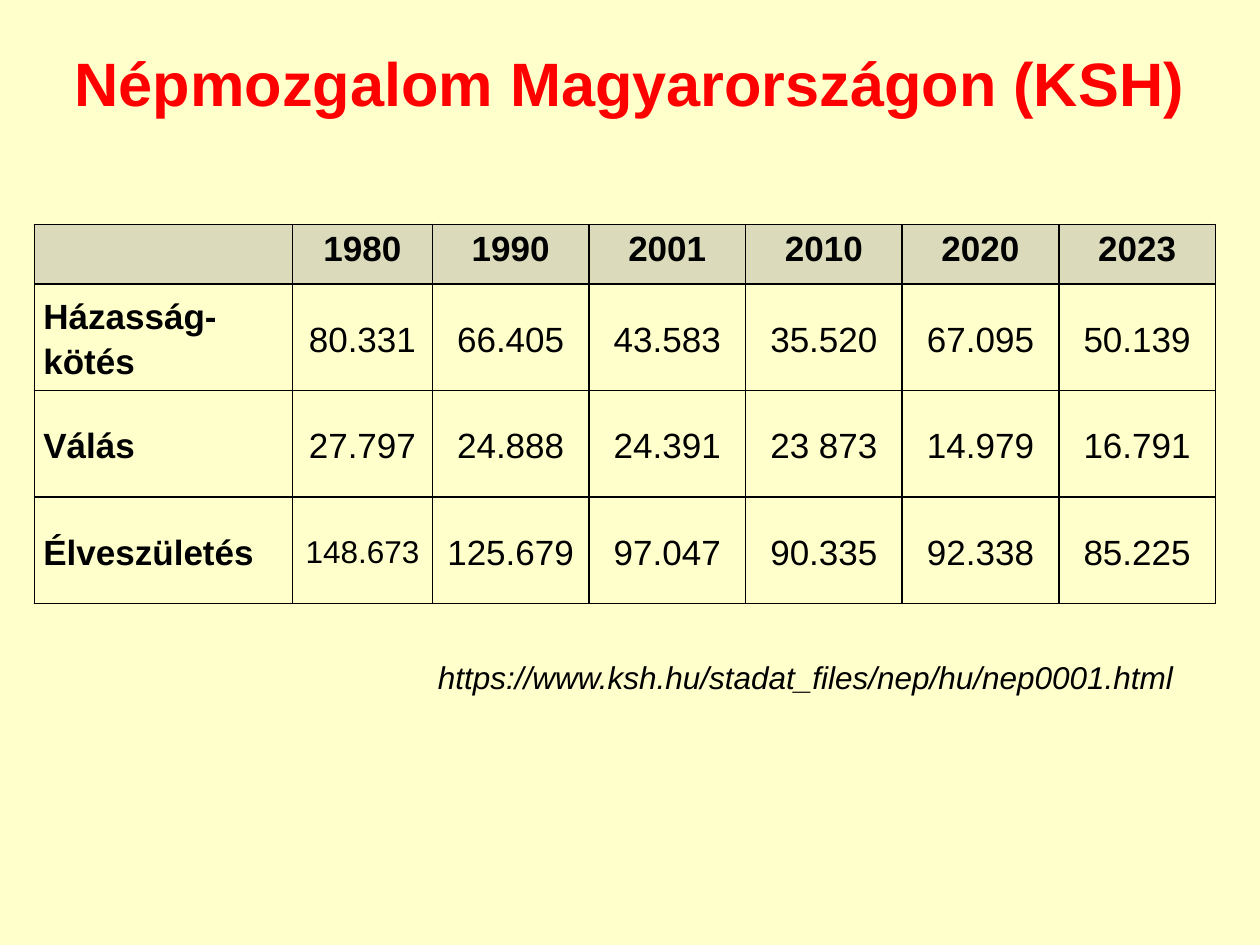
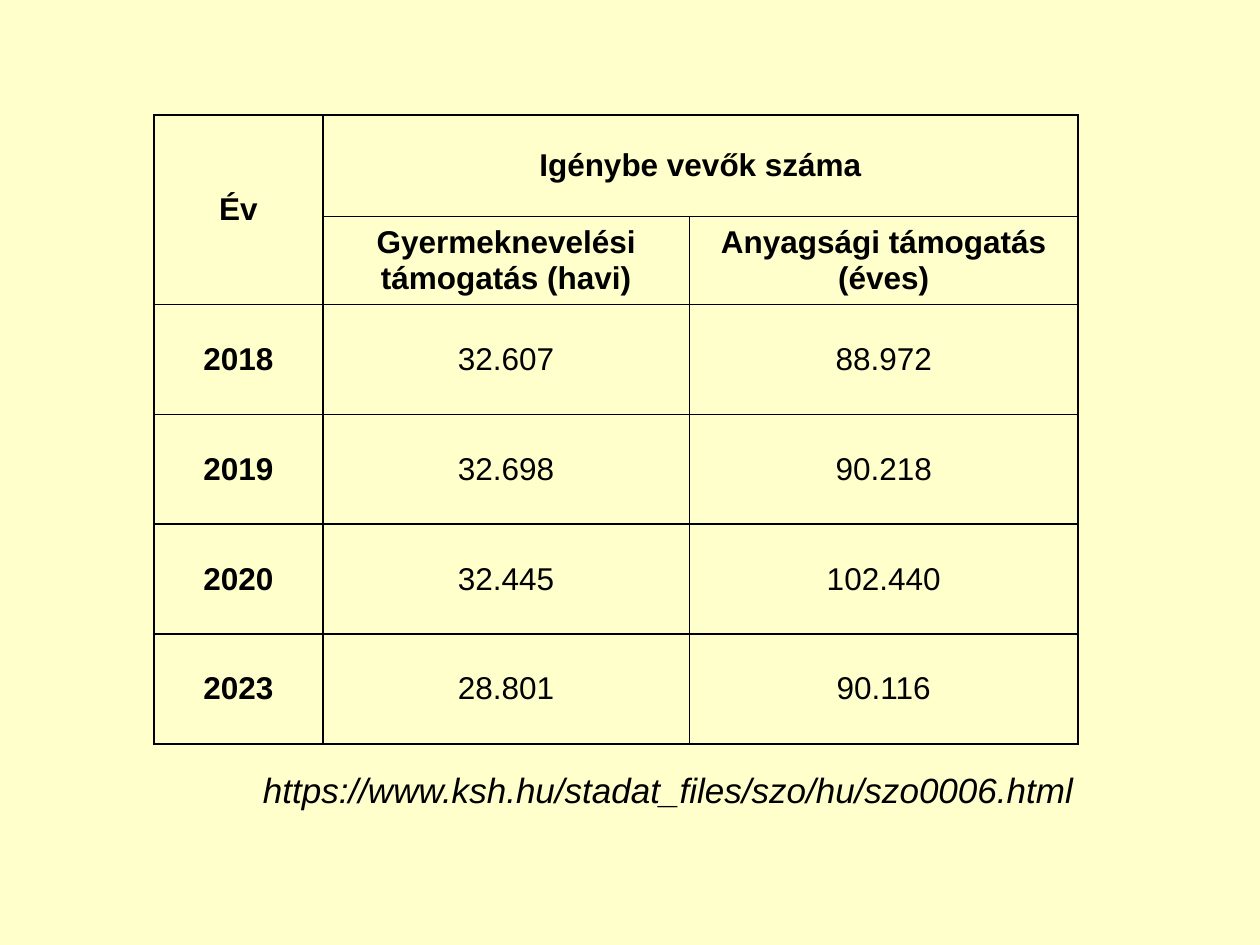
import dataclasses

import lxml.etree
import pptx
import pptx.dml.color
import pptx.enum.text
import pptx.oxml.ns
import pptx.util

Pt = pptx.util.Pt
qn = pptx.oxml.ns.qn
Align = pptx.enum.text.PP_ALIGN
Anchor = pptx.enum.text.MSO_ANCHOR


@dataclasses.dataclass(frozen=True)
class Theme:
    """Colours as hex strings, and type sizes in points."""
    font: str = "Arial"
    paper: str = "FFFFCC"
    ink: str = "000000"
    title: str = "FF0000"
    band: str = "A6A6A6"
    band_alpha: int = 40
    title_size: int = 35
    large: int = 20
    small: int = 18
    rule: int = 1


@dataclasses.dataclass(frozen=True)
class Style:
    """The look of one table."""
    size: int
    heads: int
    inset: tuple
    spacing: float = 1.0
    banded: bool = False
    label: Align = Align.CENTER


THEME = Theme()

MOVES = [
    ["", "1980", "1990", "2001", "2010", "2020", "2023"],
    ["Házasság-kötés", "80.331", "66.405", "43.583", "35.520", "67.095", "50.139"],
    ["Válás", "27.797", "24.888", "24.391", "23 873", "14.979", "16.791"],
    ["Élveszületés", "148.673", "125.679", "97.047", "90.335", "92.338", "85.225"],
]
GRANTS = [
    ["Év", "Igénybe vevők száma", ""],
    ["", "Gyermeknevelési támogatás (havi)", "Anyagsági támogatás (éves)"],
    ["2018", "32.607", "88.972"],
    ["2019", "32.698", "90.218"],
    ["2020", "32.445", "102.440"],
    ["2023", "28.801", "90.116"],
]


def rgb(code):
    """Turn a hex string into a colour."""
    return pptx.dml.color.RGBColor.from_string(code)


def split(total, fixed, count):
    """Give the fixed lengths, then share the rest equally."""
    rest = count - len(fixed)
    return list(fixed) + [(total - sum(fixed)) / rest] * rest


def write(frame, text, size, color=THEME.ink, align=Align.CENTER, bold=False, italic=False):
    """Put one formatted paragraph in a text frame."""
    frame.text = text
    para = frame.paragraphs[0]
    para.alignment = align
    for run in para.runs:
        font = run.font
        font.name, font.size = THEME.font, Pt(size)
        font.bold, font.italic = bold, italic
        font.color.rgb = rgb(color)
    return para


def border(cell):
    """Draw a thin rule on all four sides of a cell."""
    props = cell._tc.get_or_add_tcPr()
    for spot, side in enumerate(("a:lnL", "a:lnR", "a:lnT", "a:lnB")):
        line = lxml.etree.Element(qn(side), w=str(Pt(THEME.rule)))
        fill = lxml.etree.SubElement(line, qn("a:solidFill"))
        lxml.etree.SubElement(fill, qn("a:srgbClr"), val=THEME.ink)
        props.insert(spot, line)


def shade(cell, banded):
    """Fill a cell with the clear band colour, or leave it open."""
    if not banded:
        cell.fill.background()
        return
    cell.fill.solid()
    cell.fill.fore_color.rgb = rgb(THEME.band)
    color = cell._tc.tcPr.find(".//" + qn("a:srgbClr"))
    lxml.etree.SubElement(color, qn("a:alpha"), val=str(THEME.band_alpha * 1000))


def add_grid(slide, box, data, cols, rows, style):
    """Add a ruled table in the box and return it."""
    left, top, width, height = box
    frame = slide.shapes.add_table(len(data), len(data[0]), *map(Pt, box))
    table = frame.table
    for col, size in zip(table.columns, split(width, cols, len(data[0]))):
        col.width = Pt(size)
    for row, size in zip(table.rows, split(height, rows, len(data))):
        row.height = Pt(size)
    side, edge = map(Pt, style.inset)
    for r, line in enumerate(data):
        for c, text in enumerate(line):
            cell = table.cell(r, c)
            head = r < style.heads
            band = head and style.banded
            cell.margin_left = cell.margin_right = side
            cell.margin_top = cell.margin_bottom = edge
            cell.vertical_anchor = Anchor.TOP if band else Anchor.MIDDLE
            para = write(cell.text_frame, text, style.size, bold=head or c == 0,
                         align=style.label if c == 0 else Align.CENTER)
            para.line_spacing = style.spacing
            shade(cell, band)
            border(cell)
    return table


def add_title(slide, box, text):
    """Move and format the title placeholder."""
    title = slide.shapes.title
    title.left, title.top, title.width, title.height = map(Pt, box)
    title.text_frame.vertical_anchor = Anchor.MIDDLE
    write(title.text_frame, text, THEME.title_size, THEME.title, bold=True)


def add_source(slide, box, text, size):
    """Add a right-aligned web address in the box."""
    frame = slide.shapes.add_textbox(*map(Pt, box)).text_frame
    frame.word_wrap = True
    write(frame, text, size, align=Align.RIGHT, italic=True)


def build_moves(deck):
    """Build the slide on marriages, divorces and births."""
    slide = deck.slides.add_slide(deck.slide_layouts[5])
    style = Style(THEME.large, 1, (5.2, 0), 1.15, True, Align.LEFT)
    table = add_grid(slide, (19.6, 128.2, 675, 216.8), MOVES, (147.6, 79.9), (34,), style)
    table.cell(3, 1).text_frame.paragraphs[0].runs[0].font.size = Pt(THEME.small)
    add_title(slide, (0, 21.6, 720, 50), "Népmozgalom Magyarországon (KSH)")
    add_source(slide, (201.6, 372.2, 476, 29),
               "https://www.ksh.hu/stadat_files/nep/hu/nep0001.html", THEME.small)


def build_grants(deck):
    """Build the slide on family grants."""
    slide = deck.slides.add_slide(deck.slide_layouts[6])
    style = Style(THEME.small, 2, (7.2, 3.6))
    table = add_grid(slide, (88, 65.8, 528, 359.3), GRANTS, (96.5, 209.5), (57.8, 50.4), style)
    table.cell(0, 0).merge(table.cell(1, 0))
    table.cell(0, 1).merge(table.cell(0, 2))
    add_source(slide, (31, 435.6, 589.7, 31.5),
               "https://www.ksh.hu/stadat_files/szo/hu/szo0006.html", THEME.large)


def main():
    """Build and save the deck."""
    deck = pptx.Presentation()
    deck.slide_width, deck.slide_height = Pt(720), Pt(540)
    fill = deck.slide_master.background.fill
    fill.solid()
    fill.fore_color.rgb = rgb(THEME.paper)
    build_moves(deck)
    build_grants(deck)
    deck.save("out.pptx")


if __name__ == "__main__":
    main()
